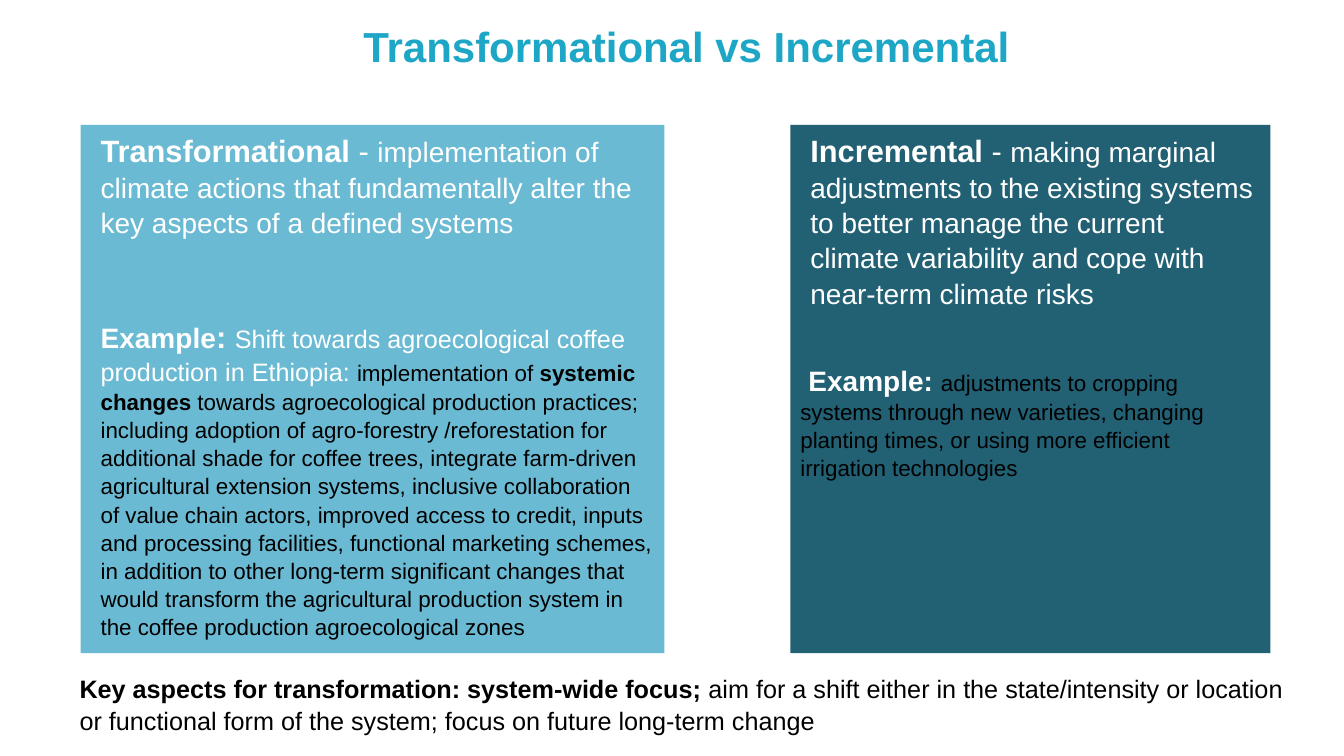
from pptx import Presentation
from pptx.dml.color import RGBColor
from pptx.enum.shapes import MSO_SHAPE
from pptx.enum.text import MSO_ANCHOR, MSO_AUTO_SIZE, PP_ALIGN
from pptx.util import Inches, Pt

RECTANGLE = MSO_SHAPE.RECTANGLE
TOP, BOTTOM = MSO_ANCHOR.TOP, MSO_ANCHOR.BOTTOM
LEFT, CENTER = PP_ALIGN.LEFT, PP_ALIGN.CENTER
NO_FIT = MSO_AUTO_SIZE.NONE

COLORS = {
    "paper": "FEFFFE",
    "ink": "000000",
    "heading": "1EA6C7",
    "light": "6BBAD3",
    "dark": "226074",
}
FONT = "Arial"
TITLE_ONLY = 5


class SlideBuilder:
    """Holds the style and the current slide; areas are percent of the slide."""

    def __init__(self, deck):
        self.deck = deck
        self.page = deck.slides.add_slide(deck.slide_layouts[TITLE_ONLY])
        self.paint(self.page.background.fill, "paper")

    def paint(self, fill, color):
        fill.solid()
        fill.fore_color.rgb = RGBColor.from_string(COLORS[color])

    def place(self, area):
        left, top, width, height = (share / 100 for share in area)
        across, down = self.deck.slide_width, self.deck.slide_height
        return (round(left * across), round(top * down),
                round(width * across), round(height * down))

    def add_text(self, box, paragraphs, anchor=TOP, align=LEFT, spacing=1.05):
        """Each paragraph is (space before, left margin, first indent, spans)."""
        frame = box.text_frame
        frame.word_wrap = True
        frame.auto_size = NO_FIT
        frame.vertical_anchor = anchor
        for index, (before, margin, indent, spans) in enumerate(paragraphs):
            para = frame.add_paragraph() if index else frame.paragraphs[0]
            settings = para._p.get_or_add_pPr()
            settings.set("marL", str(Inches(margin)))
            settings.set("indent", str(Inches(indent)))
            para.alignment = align
            para.line_spacing = spacing
            para.space_before = Pt(before)
            for text, size, color, bold in spans:
                span = para.add_run()
                span.text = text
                span.font.name = FONT
                span.font.size = Pt(size)
                span.font.bold = bold
                span.font.color.rgb = RGBColor.from_string(COLORS[color])

    def title(self, area, text):
        box = self.page.shapes.title
        box.left, box.top, box.width, box.height = self.place(area)
        self.add_text(box, [(0, 0, 0, [(text, 30, "heading", True)])],
                      BOTTOM, CENTER, 0.9)

    def panel(self, area, color, paragraphs):
        box = self.page.shapes.add_shape(RECTANGLE, *self.place(area))
        box.shadow.inherit = False
        self.paint(box.fill, color)
        box.line.fill.background()
        self.add_text(box, paragraphs)

    def note(self, area, paragraphs):
        box = self.page.shapes.add_textbox(*self.place(area))
        self.add_text(box, paragraphs)


def main():
    deck = Presentation()
    deck.slide_width, deck.slide_height = Inches(13.33), Inches(7.5)
    slide = SlideBuilder(deck)
    panel_top, panel_height = 16.53, 69.87

    # Title
    slide.title((25.81, 0.8, 50.56, 9.33), "Transformational vs Incremental")

    # Transformational panel
    slide.panel((6, panel_top, 43.44, panel_height), "light", [
        (0, 0.1, 0, [
            ("Transformational ", 22, "paper", True),
            ("- ", 22, "paper", False),
            ("implementation of climate actions that fundamentally alter "
             "the key aspects of a defined systems", 20, "paper", False),
        ]),
        (55, 0.1, 0, [
            ("Example", 20, "paper", True),
            (": ", 22, "paper", True),
            ("Shift towards agroecological coffee production in Ethiopia: ",
             18, "paper", False),
            ("implementation of ", 16, "ink", False),
            ("systemic changes", 16, "ink", True),
            (" towards agroecological production practices; including "
             "adoption of agro-forestry /reforestation for additional shade "
             "for coffee trees, integrate farm-driven agricultural extension "
             "systems, inclusive collaboration of value chain actors, "
             "improved access to credit, inputs and processing facilities, "
             "functional marketing schemes, in addition to other long-term "
             "significant changes that would transform the agricultural "
             "production system in the coffee production agroecological "
             "zones", 16, "ink", False),
        ]),
    ])

    # Key aspects below the panels
    slide.note((4.43, 88.27, 92.35, 11.73), [
        (0, 0.1, 0, [
            ("Key aspects for transformation: system-wide focus; ",
             18, "ink", True),
            ("aim for a shift either in the state/intensity or location or "
             "functional form of the system; focus on future long-term "
             "change", 18, "ink", False),
        ]),
    ])

    # Incremental panel
    slide.panel((58.81, panel_top, 35.71, panel_height), "dark", [
        (0, 0.1, 0, [
            ("Incremental", 22, "paper", True),
            (" - ", 22, "paper", False),
            ("making marginal adjustments to the existing systems to better "
             "manage the current climate variability and cope with near-term "
             "climate risks", 20, "paper", False),
        ]),
        (37, 0, 0.08, [
            ("Example: ", 20, "paper", True),
            ("adjustments to cropping systems through new varieties, "
             "changing planting times, or using more efficient irrigation "
             "technologies", 16, "ink", False),
        ]),
    ])

    deck.save("out.pptx")


if __name__ == "__main__":
    main()
